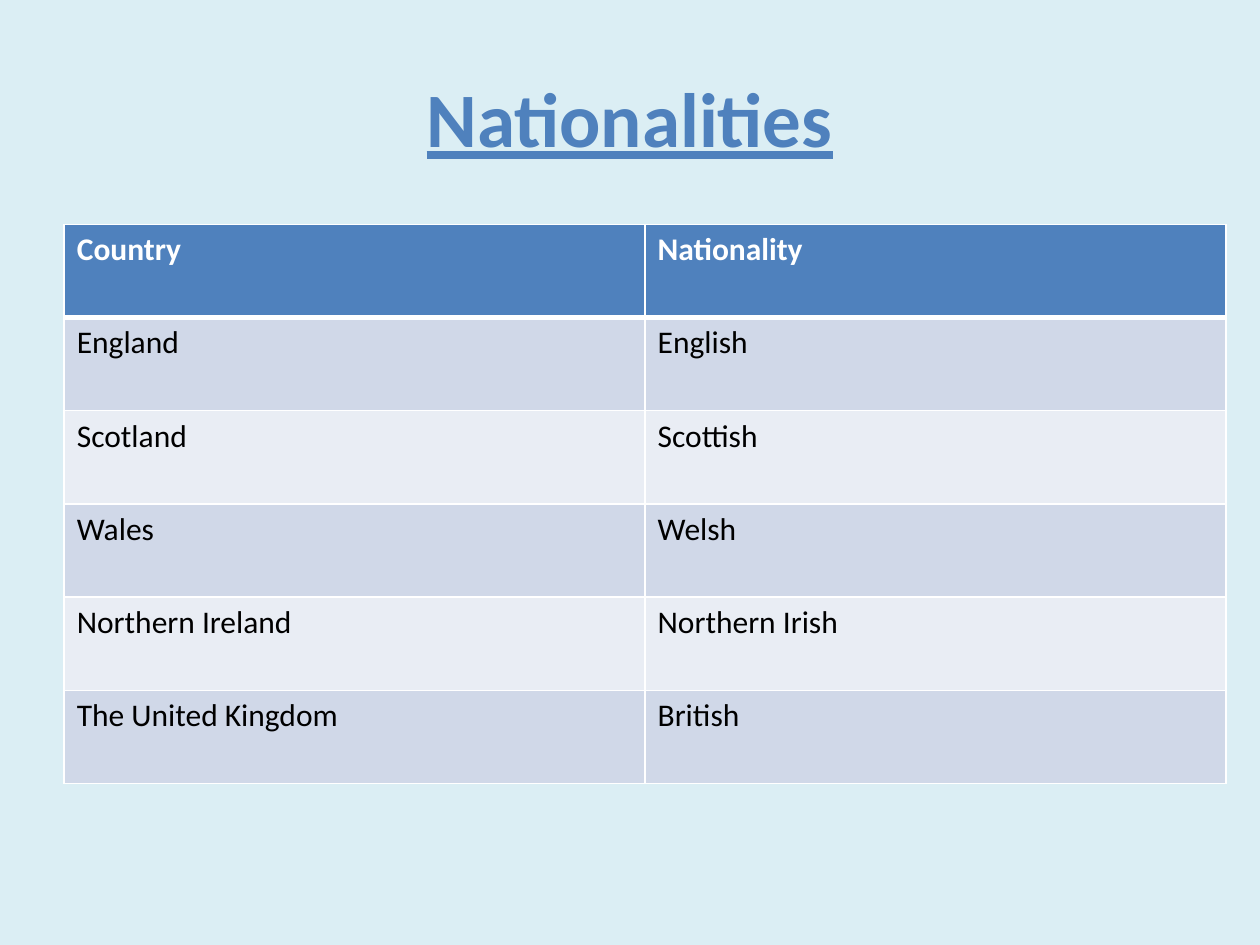
from dataclasses import dataclass

from lxml.etree import SubElement
from pptx import Presentation
from pptx.dml.color import RGBColor
from pptx.enum.text import MSO_ANCHOR, PP_ALIGN
from pptx.oxml.ns import qn
from pptx.util import Inches, Pt


@dataclass(frozen=True)
class Theme:
    font: str = "Calibri"
    background: str = "DBEEF4"
    accent: str = "4F81BD"
    bands: tuple = ("D0D8E8", "E9EDF4")
    border: str = "FFFFFF"
    header_text: str = "FFFFFF"
    body_text: str = "000000"
    title_size: int = 44
    table_size: int = 18
    thin_line: int = 1
    thick_line: int = 3


THEME = Theme()

ROWS = [
    ("Country", "Nationality"),
    ("England", "English"),
    ("Scotland", "Scottish"),
    ("Wales", "Welsh"),
    ("Northern Ireland", "Northern Irish"),
    ("The United Kingdom", "British"),
]
COLUMN_WIDTH = 4.61
ROW_HEIGHT = 0.74


def add_run(paragraph, text, size, color, bold=False, underline=False):
    run = paragraph.add_run()
    run.text = text
    font = run.font
    font.name = THEME.font
    font.size = Pt(size)
    font.bold = bold
    font.underline = underline
    font.color.rgb = RGBColor.from_string(color)


def add_title(slide, text):
    box = slide.shapes.add_textbox(Inches(0.5), Inches(0.3), Inches(9), Inches(1.25))
    frame = box.text_frame
    frame.word_wrap = True
    frame.vertical_anchor = MSO_ANCHOR.MIDDLE
    paragraph = frame.paragraphs[0]
    paragraph.alignment = PP_ALIGN.CENTER
    add_run(paragraph, text, THEME.title_size, THEME.accent, bold=True, underline=True)


def set_borders(cell, top, bottom):
    """Draw the four cell edges; must run before the fill, which follows them in the XML."""
    properties = cell._tc.get_or_add_tcPr()
    widths = {"a:lnL": THEME.thin_line, "a:lnR": THEME.thin_line, "a:lnT": top, "a:lnB": bottom}
    for tag, width in widths.items():
        line = SubElement(properties, qn(tag), w=str(Pt(width)))
        fill = SubElement(line, qn("a:solidFill"))
        SubElement(fill, qn("a:srgbClr"), val=THEME.border)


def style_cell(cell, text, row_index):
    is_header = row_index == 0
    set_borders(
        cell,
        top=THEME.thick_line if row_index == 1 else THEME.thin_line,
        bottom=THEME.thick_line if is_header else THEME.thin_line,
    )
    color = THEME.accent if is_header else THEME.bands[(row_index - 1) % 2]
    cell.fill.solid()
    cell.fill.fore_color.rgb = RGBColor.from_string(color)
    add_run(
        cell.text_frame.paragraphs[0],
        text,
        THEME.table_size,
        THEME.header_text if is_header else THEME.body_text,
        bold=is_header,
    )


def add_nationality_table(slide, rows):
    column_count = len(rows[0])
    table = slide.shapes.add_table(
        len(rows), column_count, Inches(0.51), Inches(1.78),
        Inches(COLUMN_WIDTH * column_count), Inches(ROW_HEIGHT * len(rows)),
    ).table
    for row_index, texts in enumerate(rows):
        for column_index, text in enumerate(texts):
            style_cell(table.cell(row_index, column_index), text, row_index)


def main():
    presentation = Presentation()
    presentation.slide_width = Inches(10)
    presentation.slide_height = Inches(7.5)
    slide = presentation.slides.add_slide(presentation.slide_layouts[6])
    background = slide.background.fill
    background.solid()
    background.fore_color.rgb = RGBColor.from_string(THEME.background)
    add_title(slide, "Nationalities")
    add_nationality_table(slide, ROWS)
    presentation.save("out.pptx")


if __name__ == "__main__":
    main()
